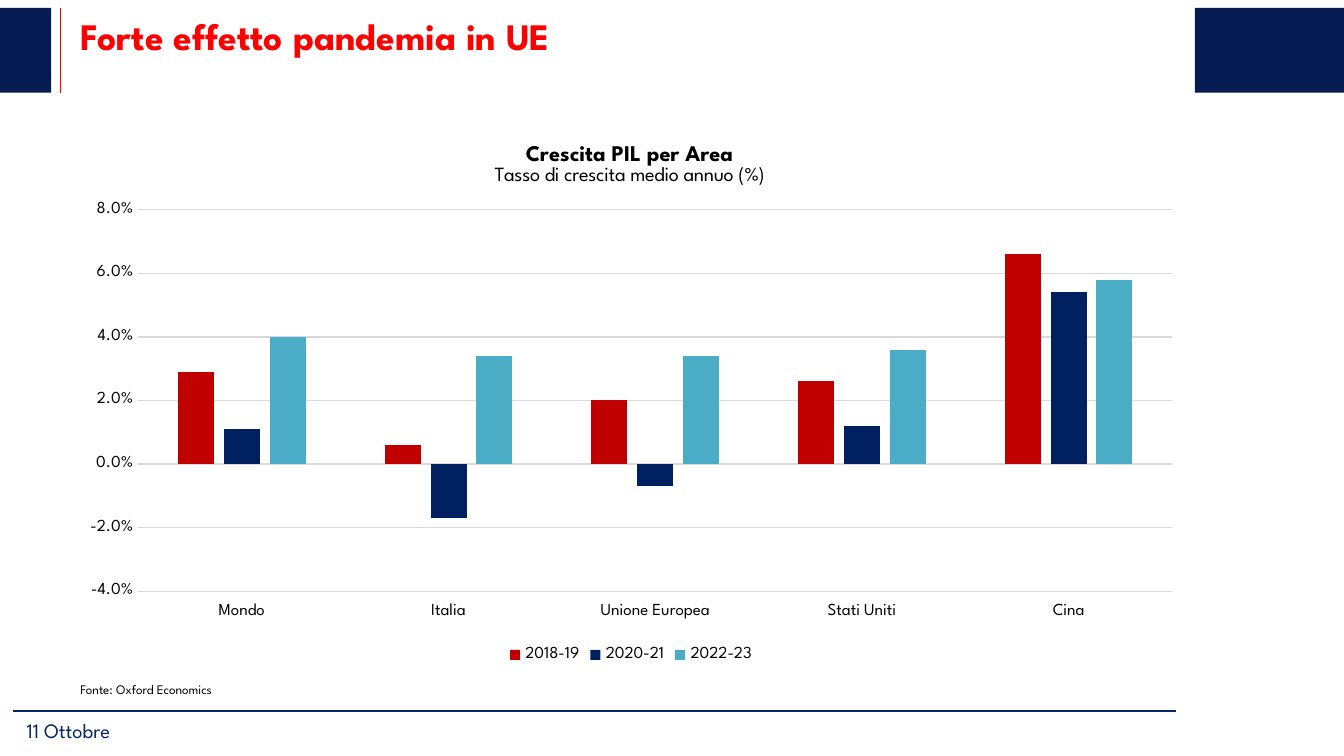
from dataclasses import dataclass

from lxml.etree import SubElement
from pptx import Presentation
from pptx.chart.data import CategoryChartData
from pptx.dml.color import RGBColor
from pptx.enum.chart import XL_CHART_TYPE, XL_LEGEND_POSITION, XL_TICK_LABEL_POSITION, XL_TICK_MARK
from pptx.enum.shapes import MSO_CONNECTOR, MSO_SHAPE
from pptx.enum.text import MSO_ANCHOR
from pptx.oxml import parse_xml
from pptx.oxml.ns import nsdecls, qn
from pptx.util import Inches, Pt


@dataclass(frozen=True)
class Theme:
    font: str = "League Spartan"
    red: str = "FF0000"
    navy: str = "051B51"
    blue: str = "032764"
    black: str = "000000"
    grid: str = "D9D9D9"
    bars: tuple = ("C00000", "002060", "4BACC6")
    heading: float = 20
    chart_title: float = 12
    chart_subtitle: float = 10.8
    footer: float = 11
    chart: float = 10
    label: float = 9
    source: float = 7


THEME = Theme()
MARGIN = 0.5
BAND_TOP, BAND_HEIGHT = 0.06, 0.63
FOOTER_TOP = 5.29
CHART_PLACE = (MARGIN, 0.9, 8.39, 4.07)
PLOT_PLACE = (1.03, 1.56, 7.69, 2.84)
CHART_TITLE_PLACE = (3.65, 1.04)

AREAS = ("Mondo", "Italia", "Unione Europea", "Stati Uniti", "Cina")
GROWTH = {
    "2018-19": (0.029, 0.006, 0.02, 0.026, 0.066),
    "2020-21": (0.011, -0.017, -0.007, 0.012, 0.054),
    "2022-23": (0.04, 0.034, 0.034, 0.036, 0.058),
}


def style_font(font, size, color=THEME.black, bold=False):
    font.name = THEME.font
    font.size = Pt(size)
    font.bold = bold
    font.color.rgb = RGBColor.from_string(color)


def add_run(para, text, size, color=THEME.black, bold=False):
    span = para.add_run()
    span.text = text
    style_font(span.font, size, color, bold)


def add_text(page, place, text, size, color=THEME.black, bold=False):
    box = page.shapes.add_textbox(*map(Inches, place))
    frame = box.text_frame
    frame.word_wrap = True
    frame.vertical_anchor = MSO_ANCHOR.TOP
    add_run(frame.paragraphs[0], text, size, color, bold)


def add_band(page, left, width):
    band = page.shapes.add_shape(
        MSO_SHAPE.RECTANGLE, *map(Inches, (left, BAND_TOP, width, BAND_HEIGHT)))
    band.shadow.inherit = False
    band.fill.solid()
    band.fill.fore_color.rgb = RGBColor.from_string(THEME.navy)
    band.line.fill.background()


def add_rule(page, start, end, color):
    rule = page.shapes.add_connector(MSO_CONNECTOR.STRAIGHT, *map(Inches, start + end))
    rule.line.color.rgb = RGBColor.from_string(color)
    rule.line.width = Pt(1)
    SubElement(rule._element.spPr, qn("a:effectLst"))


def manual_layout(left, top, width=None, height=None):
    """Turn a place on the slide into a layout in shares of the chart's size."""
    chart_left, chart_top, chart_width, chart_height = CHART_PLACE
    shares = {"x": (left - chart_left) / chart_width, "y": (top - chart_top) / chart_height}
    target = ""
    if width:
        shares.update(w=width / chart_width, h=height / chart_height)
        target = '<c:layoutTarget val="inner"/>'
    values = "".join(f'<c:{name} val="{share:.4f}"/>' for name, share in shares.items())
    return parse_xml(
        f'<c:layout {nsdecls("c")}><c:manualLayout>{target}<c:xMode val="edge"/>'
        f'<c:yMode val="edge"/>{values}</c:manualLayout></c:layout>')


def place_after(parent, layout, position):
    """Put the layout at this position among the children, replacing any other."""
    for old in parent.findall(qn("c:layout")):
        parent.remove(old)
    parent.insert(position, layout)


def style_grid_line(line):
    line.color.rgb = RGBColor.from_string(THEME.grid)
    line.width = Pt(0.75)


def style_axes(chart):
    areas, rates = chart.category_axis, chart.value_axis
    for axis in (areas, rates):
        axis.major_tick_mark = axis.minor_tick_mark = XL_TICK_MARK.NONE
        style_font(axis.tick_labels.font, THEME.label)
    areas.tick_label_position = XL_TICK_LABEL_POSITION.LOW
    style_grid_line(areas.format.line)
    rates.minimum_scale, rates.maximum_scale, rates.major_unit = -0.04, 0.08, 0.02
    rates.tick_labels.number_format = "0.0%"
    rates.tick_labels.number_format_is_linked = False
    rates.format.line.fill.background()
    style_grid_line(rates.major_gridlines.format.line)


def add_chart_title(chart, title, subtitle):
    chart.has_title = True
    frame = chart.chart_title.text_frame
    add_run(frame.paragraphs[0], title, THEME.chart_title, bold=True)
    add_run(frame.add_paragraph(), subtitle, THEME.chart_subtitle)
    place_after(chart.chart_title._element, manual_layout(*CHART_TITLE_PLACE), 1)


def add_legend(chart):
    chart.has_legend = True
    chart.legend.position = XL_LEGEND_POSITION.BOTTOM
    chart.legend.include_in_layout = False
    style_font(chart.legend.font, THEME.label)


def add_growth_chart(page):
    data = CategoryChartData(number_format="0.0%")
    data.categories = AREAS
    for period, rates in GROWTH.items():
        data.add_series(period, rates)
    chart = page.shapes.add_chart(
        XL_CHART_TYPE.COLUMN_CLUSTERED, *map(Inches, CHART_PLACE), data).chart
    style_font(chart.font, THEME.chart)
    add_chart_title(chart, "Crescita PIL per Area", "Tasso di crescita medio annuo (%)")
    style_axes(chart)
    add_legend(chart)

    plot = chart.plots[0]
    plot.vary_by_categories = False
    plot.gap_width, plot.overlap = 219, -27
    for series, color in zip(plot.series, THEME.bars):
        series.invert_if_negative = False
        series.format.fill.solid()
        series.format.fill.fore_color.rgb = RGBColor.from_string(color)
    place_after(chart._chartSpace.chart.plotArea, manual_layout(*PLOT_PLACE), 0)


def main():
    deck = Presentation()
    deck.slide_width = Inches(10)
    deck.slide_height = deck.slide_width * 9 // 16
    page = deck.slides.add_slide(deck.slide_layouts[6])

    add_band(page, 8.89, 1.12)
    add_rule(page, (0.45, BAND_TOP), (0.45, BAND_TOP + BAND_HEIGHT), THEME.red)
    add_band(page, 0, 0.38)
    add_text(page, (MARGIN, 0.05, 8.05, 0.66), "Forte effetto pandemia in UE",
             THEME.heading, THEME.red, bold=True)

    add_rule(page, (8.75, FOOTER_TOP), (0.1, FOOTER_TOP), THEME.blue)
    add_text(page, (0.1, FOOTER_TOP, 8.78, 0.34), "11 Ottobre", THEME.footer, THEME.blue)
    add_text(page, (MARGIN, 5.02, 3.08, 0.22), "Fonte: Oxford Economics", THEME.source)
    add_growth_chart(page)

    deck.save("out.pptx")


if __name__ == "__main__":
    main()
